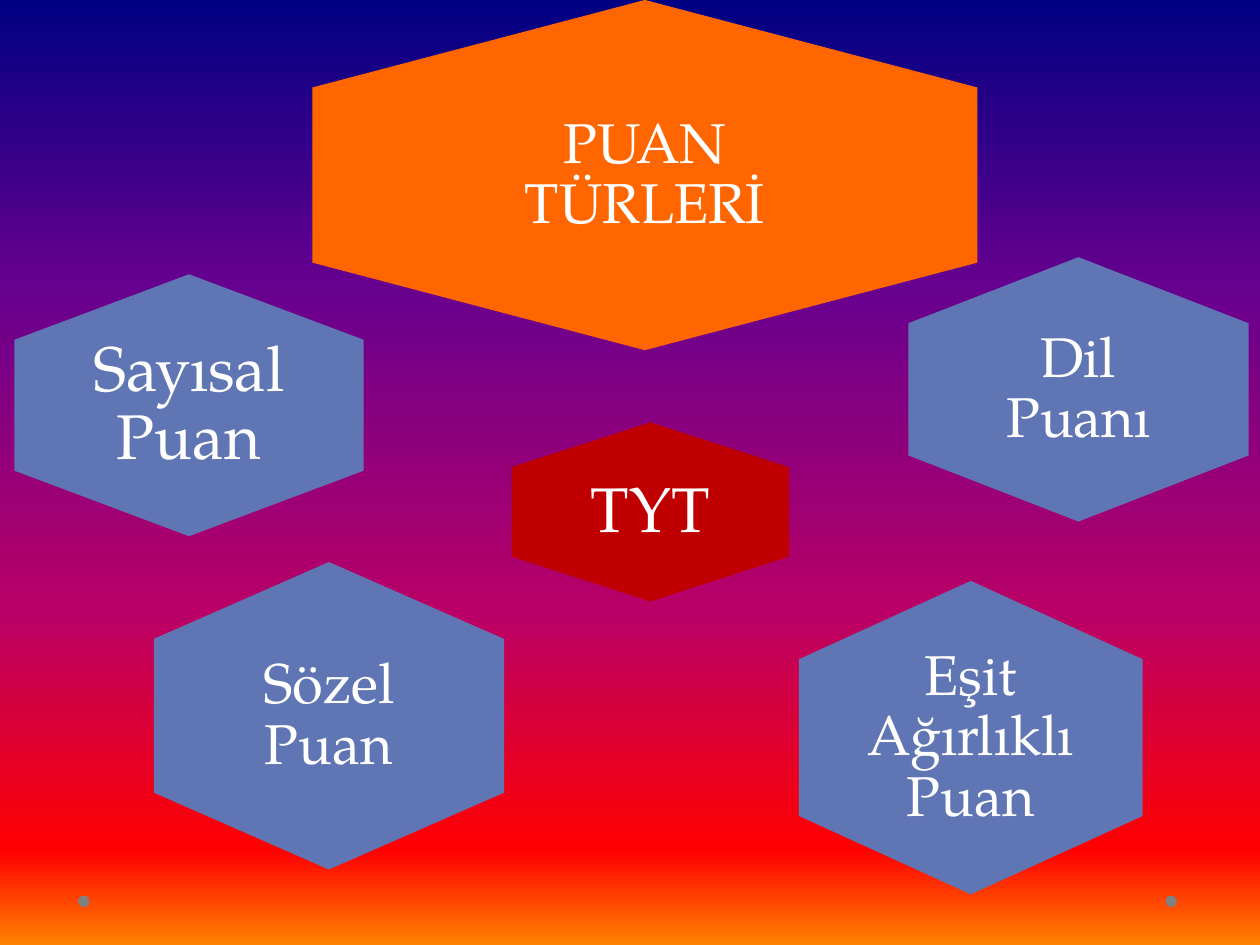
from pptx import Presentation
from pptx.dml.color import RGBColor
from pptx.enum.shapes import MSO_SHAPE as Shape
from pptx.enum.text import MSO_ANCHOR as Anchor, MSO_AUTO_SIZE as AutoSize, PP_ALIGN as Align
from pptx.oxml.ns import qn
from pptx.util import Cm, Pt
from lxml.etree import SubElement

# Content: text, centre x, centre y, width, height (cm), fill, type size, text inset
TITLE = "PUAN TÜRLERİ"
HEXAGONS = [
    ("Dil Puanı", 21.74, 7.85, 6.86, 5.33, "score", "normal", 0.33),
    ("TYT", 13.11, 10.32, 5.59, 3.61, "core", "large", 0),
    (TITLE, 13.0, 3.53, 13.41, 7.06, "title", "normal", 0.33),
    ("Eşit Ağırlıklı Puan", 19.57, 14.87, 6.93, 6.32, "score", "normal", 0),
    ("Sözel Puan", 6.63, 14.43, 7.06, 6.2, "score", "normal", 0.33),
    ("Sayısal Puan", 3.81, 8.17, 7.04, 5.28, "score", "large", 0),
]
DOT_CENTRES = [(23.61, 18.17), (1.69, 18.17)]
DOT_SIZE = 0.23
TEXT_SHARE = 2 / 3  # part of a hexagon's width and height used by its text

THEME = {
    "font": "TeX Gyre Pagella",
    "sizes": {"normal": 32, "large": 36},
    "colors": {"score": "6076B4", "core": "C00000", "title": "FF6600",
               "dot": "808080", "text": "FFFFFF"},
    "background": [(0, "000082"), (30, "66008F"), (65, "BA0066"),
                   (90, "FF0000"), (100, "FF8200")],
}


def color(name):
    return RGBColor.from_string(THEME["colors"][name])


def box(x, y, width, height):
    """Left, top, width and height of a box centred on x, y."""
    return [Cm(value) for value in (x - width / 2, y - height / 2, width, height)]


def paint_background(slide):
    fill = slide.background.fill
    fill.gradient()
    fill.gradient_angle = 270
    stops = slide.element.find(".//" + qn("a:gsLst"))
    for stop in list(stops):
        stops.remove(stop)
    for percent, value in THEME["background"]:
        stop = SubElement(stops, qn("a:gs"), pos=str(percent * 1000))
        SubElement(stop, qn("a:srgbClr"), val=value)


def add_solid(slide, kind, place, fill):
    shape = slide.shapes.add_shape(kind, *place)
    shape.shadow.inherit = False
    shape.fill.solid()
    shape.fill.fore_color.rgb = color(fill)
    shape.line.fill.background()
    return shape


def write_text(shape, text, size, inset):
    frame = shape.text_frame
    frame.word_wrap = True
    frame.auto_size = AutoSize.NONE
    frame.vertical_anchor = Anchor.MIDDLE
    frame.margin_left = frame.margin_right = Cm(inset)
    frame.margin_top = frame.margin_bottom = Cm(inset)
    paragraph = frame.paragraphs[0]
    paragraph.alignment = Align.CENTER
    paragraph.line_spacing = 0.9
    run = paragraph.add_run()
    run.text = text
    run.font.name = THEME["font"]
    run.font.size = Pt(THEME["sizes"][size])
    run.font.color.rgb = color("text")


def add_hexagon(slide, text, x, y, width, height, fill, size, inset):
    # The preset points sideways, so its sides are swapped and it is turned
    hexagon = add_solid(slide, Shape.HEXAGON, box(x, y, height, width), fill)
    hexagon.rotation = 90
    place = box(x, y, width * TEXT_SHARE, height * TEXT_SHARE)
    if text == TITLE:
        label = slide.shapes.title
        label.left, label.top, label.width, label.height = place
        hexagon.element.addnext(label.element)  # bring in front of its hexagon
    else:
        label = slide.shapes.add_textbox(*place)
    write_text(label, text, size, inset)


def main():
    presentation = Presentation()
    presentation.slide_width, presentation.slide_height = Cm(25.4), Cm(19.05)
    slide = presentation.slides.add_slide(presentation.slide_layouts[5])
    paint_background(slide)

    # Corner dots
    for x, y in DOT_CENTRES:
        add_solid(slide, Shape.OVAL, box(x, y, DOT_SIZE, DOT_SIZE), "dot")

    # Score types
    for hexagon in HEXAGONS:
        add_hexagon(slide, *hexagon)

    presentation.save("out.pptx")


if __name__ == "__main__":
    main()
